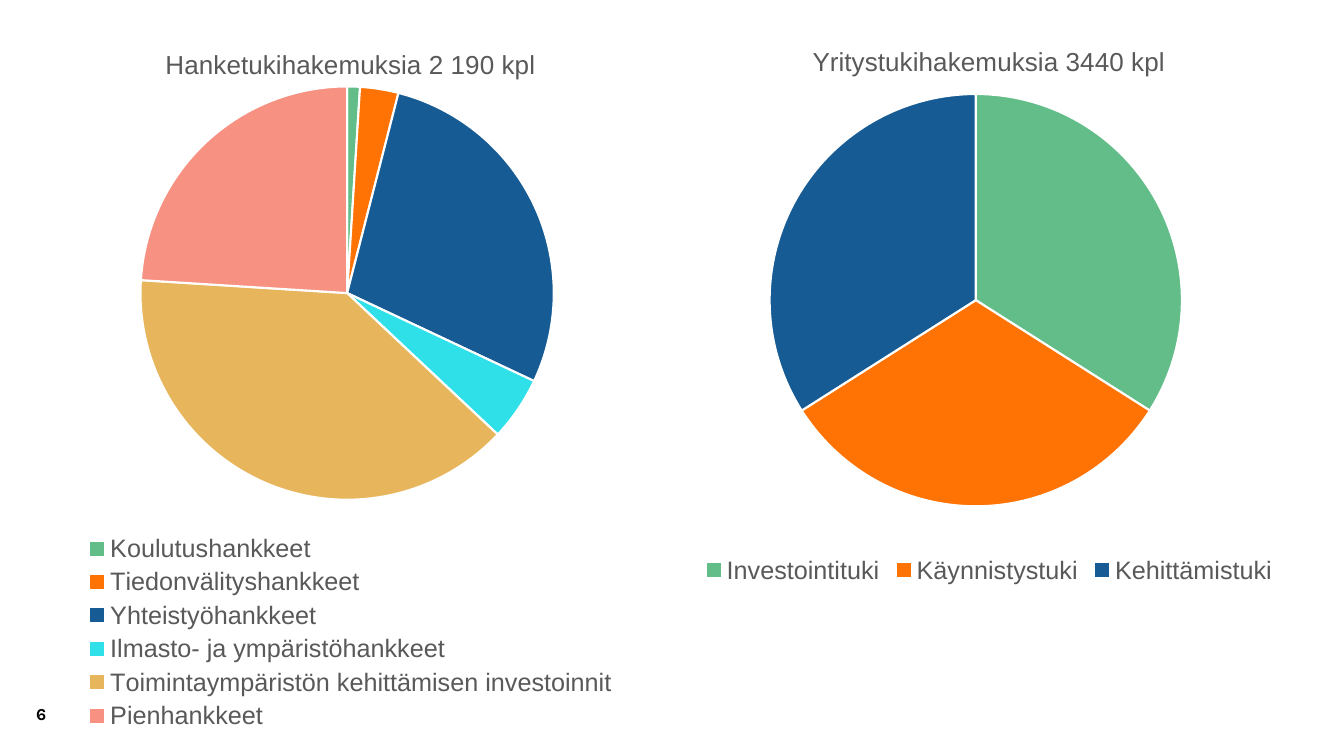
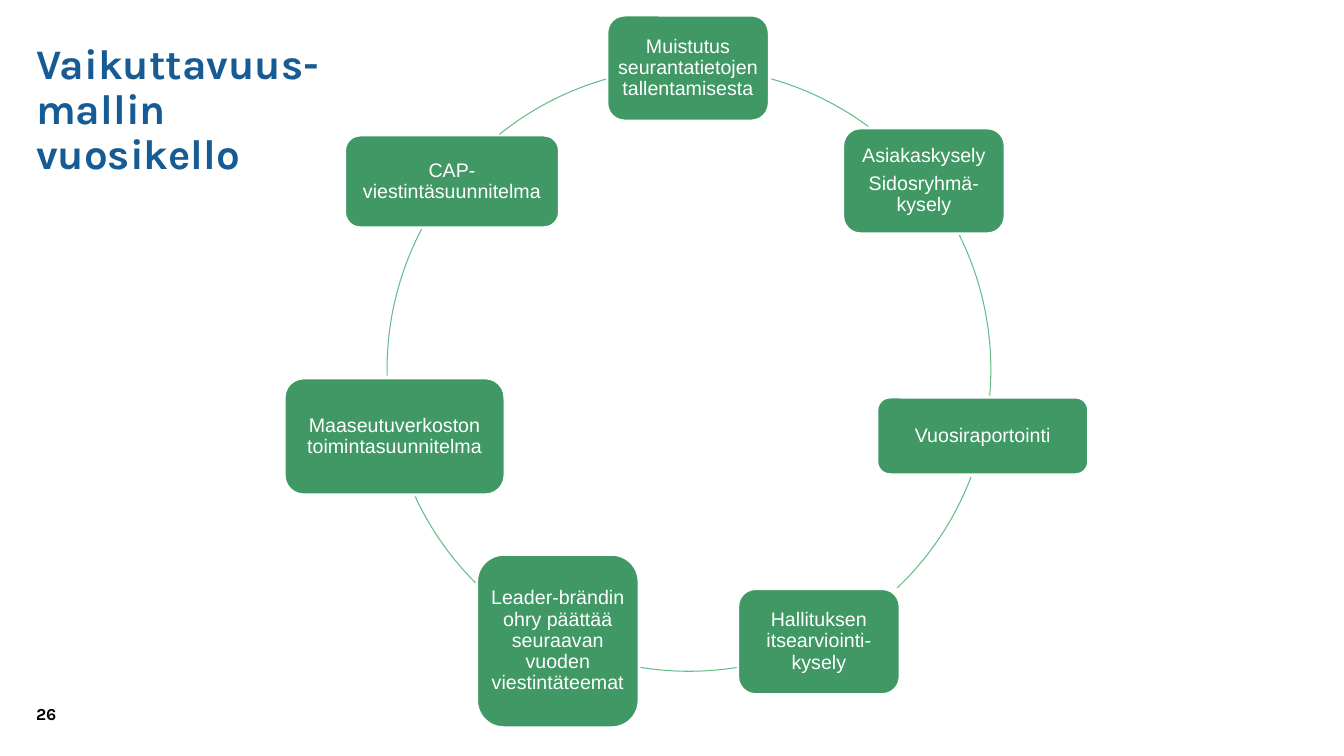
from pptx import Presentation
from pptx.chart.data import CategoryChartData
from pptx.dml.color import RGBColor
from pptx.enum.chart import XL_CHART_TYPE, XL_LEGEND_POSITION
from pptx.enum.shapes import MSO_SHAPE
from pptx.enum.text import MSO_ANCHOR, PP_ALIGN
from pptx.oxml import parse_xml
from pptx.oxml.ns import nsdecls, qn
from pptx.util import Pt

COLOURS = {
    "black": "000000", "white": "FFFFFF", "grey": "595959",
    "blue": "165B94", "box": "409864", "green": "63BD88",
    "orange": "FE7303", "cyan": "30E0E9", "sand": "E7B65C", "pink": "F79283",
}
SLICES = ["green", "orange", "blue", "cyan", "sand", "pink"]
PAGE_NUMBER = {"name": "Karla", "size": Pt(12), "bold": True, "color": "black"}
PAGE_TITLE = {"name": "Karla", "size": Pt(30), "bold": True, "color": "blue"}
CHART_TITLE = {"name": "Arial", "size": Pt(18.6), "bold": False, "color": "grey"}
CHART_LEGEND = {"name": "Arial", "size": Pt(18), "bold": False, "color": "grey"}
BOX_TEXT = {"name": "Arial", "size": Pt(14), "bold": False, "color": "white"}


def set_font(font, style):
    for key, value in style.items():
        if key == "color":
            font.color.rgb = RGBColor.from_string(COLOURS[value])
        else:
            setattr(font, key, value)


def add_text(page, place, text, style):
    """Add a wrapped text box and return it with its single paragraph."""
    box = page.shapes.add_textbox(*map(Pt, place))
    box.text_frame.word_wrap = True
    para = box.text_frame.paragraphs[0]
    span = para.add_run()
    span.text = text
    set_font(span.font, style)
    return box, para


deck = Presentation()
deck.slide_width, deck.slide_height = Pt(960), Pt(540)

pages = []
for number in ("6", "26"):
    page = deck.slides.add_slide(deck.slide_layouts[6])
    add_text(page, (18.7, 499, 62.6, 21.6), number, PAGE_NUMBER)
    pages.append(page)
chart_page, cycle_page = pages

# Pie charts: title, place, plot area as shares of the chart, values
PIES = [
    ("Hanketukihakemuksia 2 190 kpl", (0, 16, 501, 509),
     {"x": 0.2, "y": 0.09, "w": 0.59, "h": 0.58},
     {"Koulutushankkeet": 1, "Tiedonvälityshankkeet": 3, "Yhteistyöhankkeet": 28,
      "Ilmasto- ja ympäristöhankkeet": 5,
      "Toimintaympäristön kehittämisen investoinnit": 39, "Pienhankkeet": 24}),
    ("Yritystukihakemuksia 3440 kpl", (469, 16, 475, 405),
     {"x": 0.17, "y": 0.1, "w": 0.62, "h": 0.78},
     {"Investointituki": 34, "Käynnistystuki": 32, "Kehittämistuki": 34}),
]
for title, place, plot_area, values in PIES:
    data = CategoryChartData()
    data.categories = list(values)
    data.add_series(title, list(values.values()))
    chart = chart_page.shapes.add_chart(
        XL_CHART_TYPE.PIE, *map(Pt, place), data).chart
    set_font(chart.font, {"name": "Arial", "size": Pt(10), "color": "black"})

    chart.has_title = True
    span = chart.chart_title.text_frame.paragraphs[0].add_run()
    span.text = title
    set_font(span.font, CHART_TITLE)

    chart.has_legend = True
    chart.legend.position = XL_LEGEND_POSITION.BOTTOM
    chart.legend.include_in_layout = False
    set_font(chart.legend.font, CHART_LEGEND)

    plot = chart.plots[0]
    plot.vary_by_categories = True
    for index, colour in enumerate(SLICES[:len(values)]):
        look = plot.series[0].points[index].format
        look.fill.solid()
        look.fill.fore_color.rgb = RGBColor.from_string(COLOURS[colour])
        look.line.color.rgb = RGBColor.from_string(COLOURS["white"])
        look.line.width = Pt(1.5)

    area = chart.element.find(".//" + qn("c:plotArea"))
    for layout in area.findall(qn("c:layout")):
        area.remove(layout)
    modes = "".join(f'<c:{axis}Mode val="edge"/>' for axis in "xy")
    sizes = "".join(f'<c:{key} val="{share}"/>' for key, share in plot_area.items())
    area.insert(0, parse_xml(
        f'<c:layout {nsdecls("c")}><c:manualLayout><c:layoutTarget val="inner"/>'
        f"{modes}{sizes}</c:manualLayout></c:layout>"))

# Annual cycle
title_box, para = add_text(
    cycle_page, (18.7, 13, 234, 167), "Vaikuttavuus-mallin vuosikello", PAGE_TITLE)
title_box.text_frame.margin_top = Pt(17.7)
para.line_spacing = 0.9

# Each step: place, paragraphs, and start and end angle of the arc after it
STEPS = [
    ((433.5, 10.8, 115.9, 75.6), ["Muistutus seurantatietojen tallentamisesta"],
     (285.8, 306.7)),
    ((602, 91.4, 115.9, 75.6), ["Asiakaskysely", "Sidosryhmä-kysely"], (333.6, 5.1)),
    ((626.4, 283.7, 151.2, 55.4), ["Vuosiraportointi"], (20.9, 46.4)),
    ((527, 420.5, 115.9, 75.6), ["Hallituksen itsearviointi-kysely"], (80.9, 99.3)),
    ((340.5, 396, 115.9, 123.8),
     ["Leader-brändin ohry päättää seuraavan vuoden viestintäteemat"], (135, 155.3)),
    ((203, 270, 157.7, 83.5), ["Maaseutuverkoston toimintasuunnitelma"],
     (178.8, 207.7)),
    ((246.2, 96.5, 153.4, 66.2), ["CAP-viestintäsuunnitelma"], (231.1, 254)),
]
RING = (276.5, 48.2, 431.3, 431.3)
for place, texts, angles in STEPS:
    box = cycle_page.shapes.add_shape(MSO_SHAPE.ROUNDED_RECTANGLE, *map(Pt, place))
    box.shadow.inherit = False
    box.fill.solid()
    box.fill.fore_color.rgb = RGBColor.from_string(COLOURS["box"])
    box.line.color.rgb = RGBColor.from_string(COLOURS["white"])
    box.line.width = Pt(2)
    frame = box.text_frame
    frame.word_wrap = True
    frame.vertical_anchor = MSO_ANCHOR.MIDDLE
    for side in ("left", "top", "right", "bottom"):
        setattr(frame, f"margin_{side}", Pt(4.2))
    for index, text in enumerate(texts):
        para = frame.add_paragraph() if index else frame.paragraphs[0]
        para.alignment = PP_ALIGN.CENTER
        para.line_spacing = 0.9
        para.space_after = Pt(5)
        span = para.add_run()
        span.text = text
        set_font(span.font, BOX_TEXT)

    arc = cycle_page.shapes.add_shape(MSO_SHAPE.ARC, *map(Pt, RING))
    arc.shadow.inherit = False
    arc.fill.background()
    arc.line.color.rgb = RGBColor.from_string(COLOURS["green"])
    arc.line.width = Pt(0.75)
    for index, angle in enumerate(angles):
        arc.adjustments[index] = angle * 0.6  # 60000 units a degree, scaled by 100000

deck.save("out.pptx")
